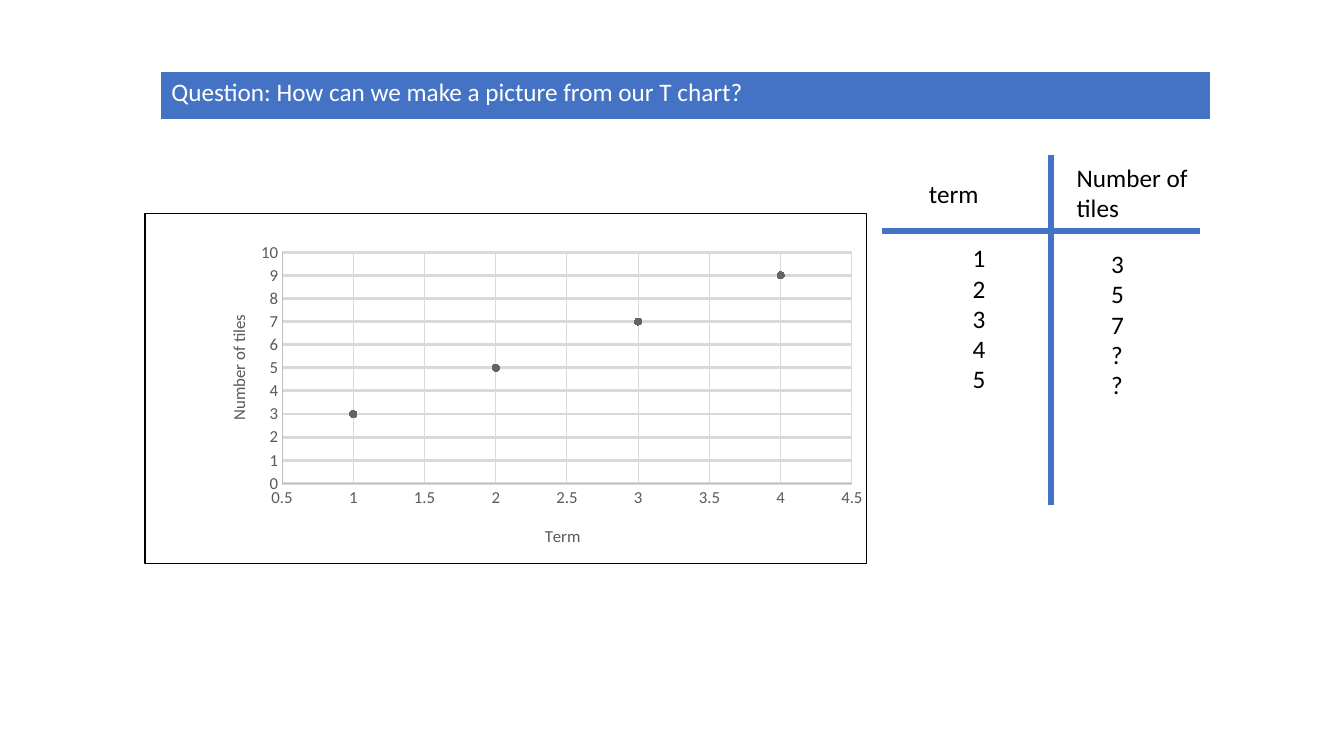
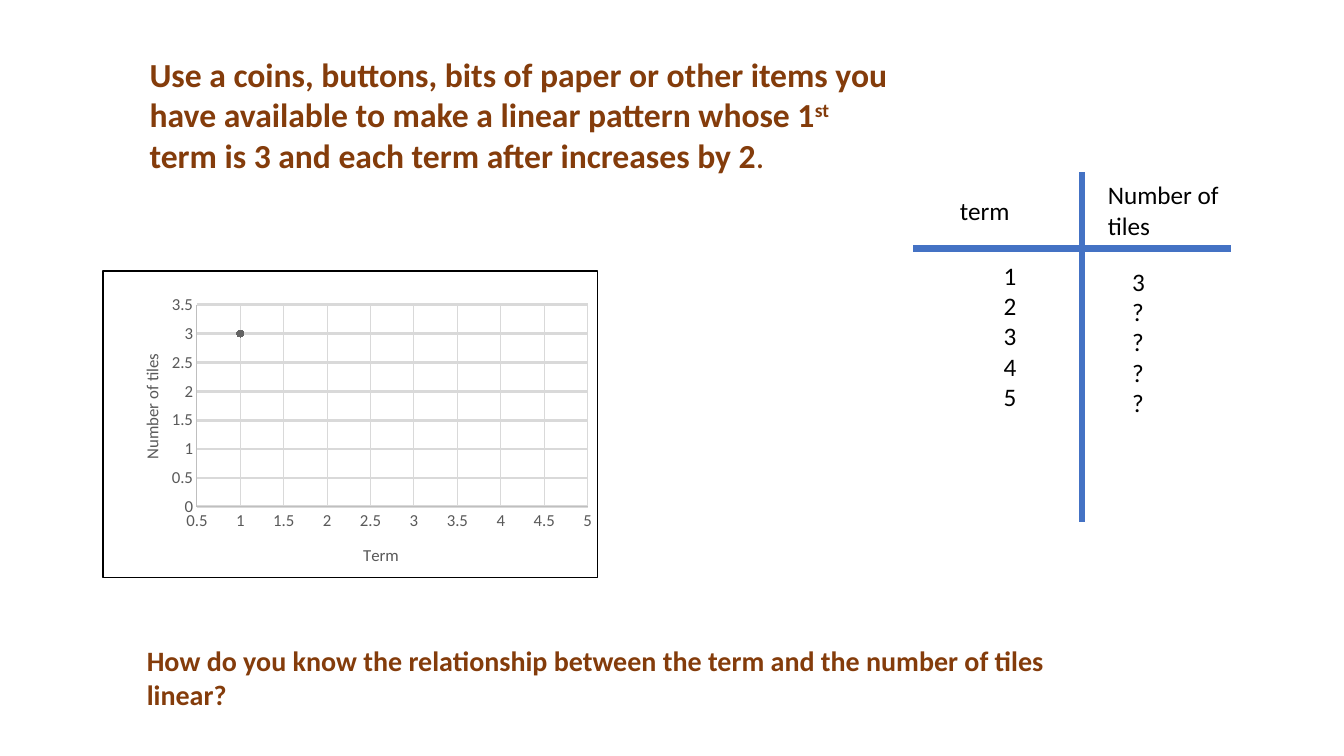
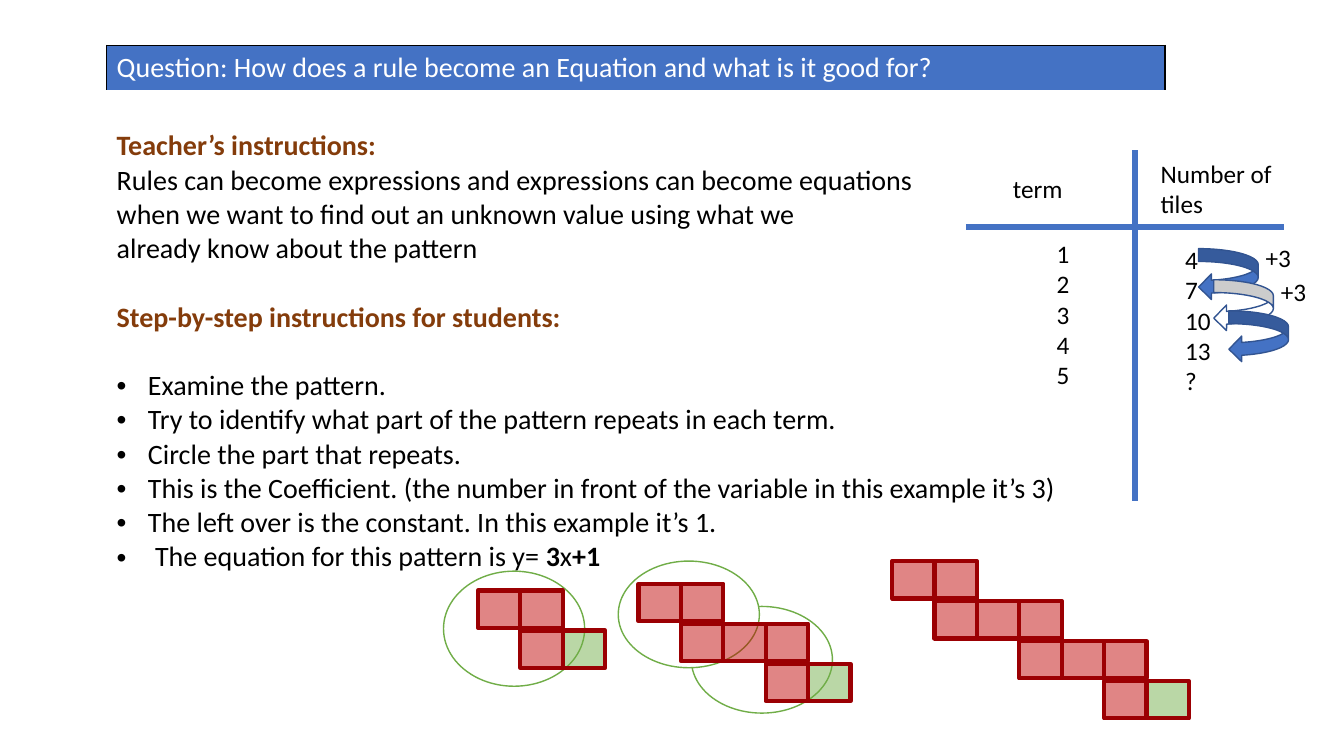
from dataclasses import dataclass
from lxml import etree
from pptx import Presentation
from pptx import util as u
from pptx.chart import data as cd
from pptx.dml import color as dc
from pptx.enum import chart as ce, shapes as se, text as te
from pptx.oxml import ns


@dataclass(frozen=True)
class Theme:
    font: str = "Calibri"
    blue: str = "4472C4"
    navy: str = "325491"
    brown: str = "843C0B"
    black: str = "000000"
    white: str = "FFFFFF"
    red: str = "C00000"
    maroon: str = "9B0003"
    green: str = "70AD47"
    label: str = "595959"
    axis: str = "BFBFBF"
    grid: str = "D9D9D9"
    dot: str = "646464"
    small: int = 12
    body: int = 18
    large: int = 20
    head: int = 24


T = Theme()
WIDE, HIGH = u.Inches(13.33), u.Inches(7.5)
COLS, ROWS = 160, 90
PLAIN = "{2D5ABB26-0587-4C30-8999-92F81FD0307C}"
BOLD = {"color": T.brown, "bold": True}


def col(n):
    return int(WIDE * n / COLS)


def row(n):
    return int(HIGH * n / ROWS)


def place(x, y, w, h):
    return col(x), row(y), col(w), row(h)


def rgb(code):
    return dc.RGBColor.from_string(code)


def style(font, size=T.body, color=T.black, **more):
    look = {"name": T.font, "size": u.Pt(size), "bold": False, **more}
    for key, value in look.items():
        setattr(font, key, value)
    font.color.rgb = rgb(color)


def stroke(line, color, width):
    line.color.rgb = rgb(color)
    line.width = u.Pt(width)


def paint(fill, color, alpha=None):
    fill.solid()
    fill.fore_color.rgb = rgb(color)
    if alpha:
        tint = fill._xPr.find(".//" + ns.qn("a:srgbClr"))
        etree.SubElement(tint, ns.qn("a:alpha")).set("val", str(alpha * 1000))


def bullet(para, indent):
    prop = para._p.get_or_add_pPr()
    prop.set("marL", str(u.Inches(indent)))
    prop.set("indent", str(-u.Inches(indent)))
    etree.SubElement(prop, ns.qn("a:buFont")).set("typeface", "Arial")
    etree.SubElement(prop, ns.qn("a:buChar")).set("char", "•")


def write(frame, lines, **base):
    frame.word_wrap = True
    for i, line in enumerate(lines):
        para = frame.paragraphs[0] if i == 0 else frame.add_paragraph()
        para.alignment = te.PP_ALIGN.LEFT
        for part in [(line, {})] if isinstance(line, str) else line:
            text, look = part
            look = {**base, **look}
            raised = look.pop("raised", False)
            run = para.add_run()
            run.text = text
            style(run.font, **look)
            if raised:
                run._r.get_or_add_rPr().set("baseline", "30000")


def label(slide, box, lines, **look):
    write(slide.shapes.add_textbox(*place(*box)).text_frame, lines, **look)


def rule(slide, x, y, w, h):
    line = slide.shapes.add_connector(
        se.MSO_CONNECTOR.STRAIGHT, col(x), row(y), col(x + w), row(y + h))
    stroke(line.line, T.blue, 4.5)
    etree.SubElement(line._element.spPr, ns.qn("a:effectLst"))


def shape(slide, kind, box, fill, edge, width, alpha=None):
    item = slide.shapes.add_shape(kind, *place(*box))
    item.shadow.inherit = False
    paint(item.fill, fill, alpha)
    stroke(item.line, edge, width)


def tee(slide, x, y, values, shift=24.9):
    rule(slide, x, y, 37.8, 0)
    rule(slide, x + 20.1, y - 9.1, 0, 41.7)
    terms = [str(n) for n in range(1, 6)]
    for dx, dy, w, h, lines in (
            (4.4, -6.9, 10.2, 4.8, ["term"]),
            (22, -8.8, 17, 8.5, ["Number of tiles"]),
            (9.6, 0.8, 5.2, 19.4, terms),
            (shift, 1.5, 5.8, 19.4, values)):
        label(slide, (x + dx, y + dy, w, h), lines)


def panel(slide, x, y, w, heights, text, size):
    table = slide.shapes.add_table(2, 1, *place(x, y, w, sum(heights))).table
    table.first_row = table.horz_banding = False
    table._tbl.tblPr.find(ns.qn("a:tableStyleId")).text = PLAIN
    for line, high in zip(table.rows, heights):
        line.height = row(high)
    top, body = table.cell(0, 0), table.cell(1, 0)
    paint(top.fill, T.blue)
    body.fill.background()
    write(top.text_frame, [text], size=size, color=T.white)
    return top, body


def border(cell, sides):
    prop = cell._tc.get_or_add_tcPr()
    for i, side in enumerate(sides):
        line = etree.Element(ns.qn("a:ln" + side), w=str(u.Pt(1)))
        fill = etree.SubElement(line, ns.qn("a:solidFill"))
        etree.SubElement(fill, ns.qn("a:srgbClr")).set("val", T.black)
        prop.insert(i, line)


def layout(host, index, **values):
    node = host.find(ns.qn("c:layout"))
    if node is None:
        node = etree.Element(ns.qn("c:layout"))
        host.insert(index, node)
    manual = etree.SubElement(node, ns.qn("c:manualLayout"))
    for key, value in values.items():
        etree.SubElement(manual, ns.qn("c:" + key)).set("val", str(value))


def frame(chart):
    code = (f'<c:spPr {ns.nsdecls("c", "a")}><a:noFill/><a:ln w="{u.Pt(0.75)}">'
            f'<a:solidFill><a:srgbClr val="{T.black}"/></a:solidFill>'
            '</a:ln></c:spPr>')
    chart._chartSpace.find(ns.qn("c:chart")).addnext(etree.fromstring(code))


def scale(axis, name, spot, span, turn, width):
    title = axis.axis_title
    write(title.text_frame, [name], size=T.small, color=T.label)
    node = title._element
    node.find(".//" + ns.qn("a:bodyPr")).set("rot", str(turn * 60000))
    layout(node, 1, xMode="edge", yMode="edge", x=spot[0], y=spot[1])
    low, high, step = span
    for key, value in {
            "minimum_scale": low, "maximum_scale": high, "major_unit": step,
            "has_major_gridlines": True,
            "major_tick_mark": ce.XL_TICK_MARK.NONE,
            "minor_tick_mark": ce.XL_TICK_MARK.NONE}.items():
        setattr(axis, key, value)
    style(axis.tick_labels.font, T.small, T.label)
    axis.tick_labels.number_format = "General"
    axis.tick_labels.number_format_is_linked = False
    stroke(axis.format.line, T.axis, 0.75)
    stroke(axis.major_gridlines.format.line, T.grid, width)


def plot(slide, box, values, spans, spots):
    data = cd.XyChartData()
    series = data.add_series("Series 1")
    for term, tiles in enumerate(values, 1):
        series.add_data_point(term, tiles)
    chart = slide.shapes.add_chart(
        ce.XL_CHART_TYPE.XY_SCATTER, *place(*box), data).chart
    chart.has_legend = chart.has_title = False
    style(chart.font, 10)
    chart.plots[0].vary_by_categories = False
    dots = chart.plots[0].series[0]
    dots.smooth = False
    dots.format.line.fill.background()
    dots.marker.style = ce.XL_MARKER_STYLE.CIRCLE
    dots.marker.size = 5
    paint(dots.marker.format.fill, T.dot)
    stroke(dots.marker.format.line, T.dot, 0.75)
    scale(chart.category_axis, "Term", spots[0], spans[0], 0, 0.75)
    scale(chart.value_axis, "Number of tiles", spots[1], spans[1], -90, 2)
    area = chart._chartSpace.find(".//" + ns.qn("c:plotArea"))
    layout(area, 0, layoutTarget="inner", xMode="edge", yMode="edge",
           x=0.19, y=0.11, w=0.79, h=0.66)
    frame(chart)


def tiles(slide, x, y, term):
    last = 2 * term
    for r in range(term + 1):
        for c in range(max(0, 2 * r - 1), min(2 * r + 1, last) + 1):
            shape(slide, se.MSO_SHAPE.RECTANGLE,
                  (x + 5.05 * c, y + 4.76 * r, 5.05, 4.45),
                  T.green if c == last else T.red, T.maroon, 3, 48)


def picture_slide(slide):
    panel(slide, 19.2, 8.6, 124.8, (5.6, 63.8),
          "Question: How can we make a picture from our T chart?", T.body)
    plot(slide, (17.2, 25.4, 86, 41.8), (3, 5, 7, 9),
         ((0.5, 4.5, 0.5), (0, 10, 1)), ((0.55, 0.88), (0.11, 0.28)))
    tee(slide, 105, 27.5, ["3", "5", "7", "?", "?"], 26.1)


def pattern_slide(slide):
    title = slide.shapes.title
    for key, value in zip(("left", "top", "width", "height"),
                          place(16.6, 5.8, 92.2, 15.7)):
        setattr(title, key, value)
    title.text_frame.auto_size = te.MSO_AUTO_SIZE.NONE
    title.text_frame.vertical_anchor = te.MSO_ANCHOR.TOP
    write(title.text_frame, [[
        ("Use a coins, buttons, bits of paper or other items you have "
         "available to make a linear pattern whose 1", {}),
        ("st", {"raised": True}),
        (" term is 3 and each term after increases by 2", {}),
        (".", {"bold": False})]], size=T.head, **BOLD)
    plot(slide, (12.2, 32.2, 59, 36.6), (3,),
         ((0.5, 5, 0.5), (0, 3.5, 0.5)), ((0.52, 0.88), (0.07, 0.26)))
    label(slide, (16.3, 76, 116, 9.2),
          ["How do you know the relationship between the term and the "
           "number of tiles linear?"], size=T.large, **BOLD)
    tee(slide, 108.7, 29.6, ["3", "?", "?", "?", "?"])


def equation_slide(slide):
    top, body = panel(
        slide, 12.7, 5.4, 126, (5.2, 62.9),
        "Question: How does a rule become an Equation and what is it good for?",
        T.large)
    border(top, "LRT")
    body.margin_top = u.Inches(0.39)
    intro = [
        [("Teacher’s instructions:", BOLD)],
        "Rules can become expressions and expressions can become equations",
        "when we want to find out an unknown value using what we",
        "already know about the pattern",
        [("Step-by-step instructions for students:", BOLD)]]
    steps = [
        "Examine the pattern.",
        "Try to identify what part of the pattern repeats in each term.",
        "Circle the part that repeats.",
        "This is the Coefficient. (the number in front of the variable "
        "in this example it’s 3)",
        "The left over is the constant. In this example it’s 1.",
        [("The equation for this pattern is y= ", {}), ("3", {"bold": True}),
         ("x", {}), ("+1", {"bold": True})]]
    write(body.text_frame, intro + steps, size=T.large)
    paras = body.text_frame.paragraphs
    first = len(intro)
    for i in (first - 1, first):
        paras[i].space_before = u.Pt(24.4)
    for para in paras[first:]:
        bullet(para, 0.38 if para is paras[-1] else 0.31)

    for x, y, h in ((52.8, 68, 13.7), (82.3, 72.2, 12.7), (73.6, 66.8, 12.7)):
        shape(slide, se.MSO_SHAPE.OVAL, (x, y, 16.8, h), T.white, T.green, 1)
    for term, (x, y) in enumerate(((56.9, 70.3), (76, 69.5), (106.2, 66.8)), 1):
        tiles(slide, x, y, term)

    tee(slide, 115, 27, ["4", "7", "10", "13", "?"])
    for i, fill in enumerate((T.blue, T.white, T.blue)):
        shape(slide, se.MSO_SHAPE.CURVED_LEFT_ARROW,
              (142.7 + 1.8 * i, 29.6 + 3.7 * i, 7.1, 6.1), fill, T.navy, 1)
    for i in range(2):
        label(slide, (149.5 + 1.8 * i, 28.3 + 4 * i, 8.6, 4.8), ["+3"])


def main():
    deck = Presentation()
    deck.slide_width, deck.slide_height = WIDE, HIGH
    titled, blank = deck.slide_layouts[5], deck.slide_layouts[6]
    for build, kind in ((picture_slide, blank), (pattern_slide, titled),
                        (equation_slide, blank)):
        build(deck.slides.add_slide(kind))
    deck.save("out.pptx")


if __name__ == "__main__":
    main()
